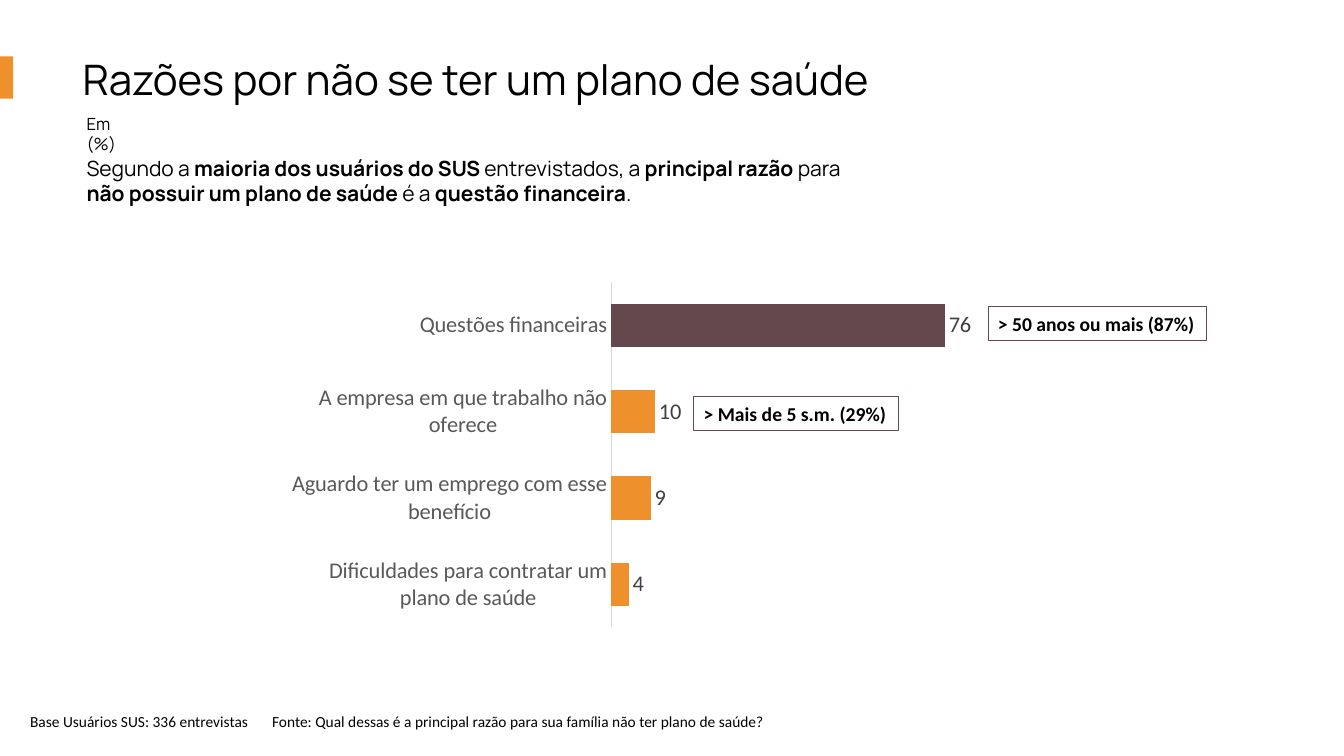
from dataclasses import dataclass

from lxml import etree
from pptx import Presentation
from pptx.chart.data import CategoryChartData
from pptx.dml.color import RGBColor
from pptx.enum import chart as ch, shapes, text
from pptx.oxml import ns
from pptx.util import Inches, Pt


@dataclass(frozen=True)
class Theme:
    heading: str = "Manrope"
    body: str = "Calibri"
    black: str = "000000"
    white: str = "FFFFFF"
    orange: str = "EE902C"
    plum: str = "65484D"
    axis_text: str = "595959"
    axis_line: str = "D9D9D9"
    value_text: str = "404040"
    title_size: float = 30
    lead_size: float = 15
    unit_size: float = 12
    source_size: float = 11
    callout_size: float = 14
    chart_size: float = 16
    line_width: float = 0.75


def rgb(value):
    return RGBColor.from_string(value)


def set_font(font, size, name, color, bold=False):
    font.size, font.name, font.bold = Pt(size), name, bold
    font.color.rgb = rgb(color)


def write(tf, content, *, size, name, color, bold=False, wrap=True, tab=None):
    """Fill tf; in content, every second part between asterisks is bold."""
    tf.word_wrap = wrap
    p = tf.paragraphs[0]
    p.alignment = text.PP_ALIGN.LEFT
    for i, part in enumerate(content.split("*")):
        if part:
            r = p.add_run()
            r.text = part
            set_font(r.font, size, name, color, bold or i % 2 == 1)
    if tab:
        tabs = etree.SubElement(p._p.get_or_add_pPr(), ns.qn("a:tabLst"))
        etree.SubElement(tabs, ns.qn("a:tab"), pos=str(Inches(tab)), algn="l")


def set_plot_area(chart, **fractions):
    """Fix the inner plot area as fractions (x, y, w, h) of the chart."""
    plot_area = chart._chartSpace.chart.plotArea
    for old in plot_area.findall(ns.qn("c:layout")):
        plot_area.remove(old)
    layout = etree.Element(ns.qn("c:layout"))
    manual = etree.SubElement(layout, ns.qn("c:manualLayout"))
    settings = {"layoutTarget": "inner", "xMode": "edge", "yMode": "edge", **fractions}
    for tag, value in settings.items():
        etree.SubElement(manual, ns.qn(f"c:{tag}"), val=str(value))
    plot_area.insert(0, layout)


class SlideBuilder:
    def __init__(self, prs, theme):
        self.theme = theme
        self.s = prs.slides.add_slide(prs.slide_layouts[6])

    def text(self, box, content, **style):
        sp = self.s.shapes.add_textbox(*map(Inches, box))
        write(sp.text_frame, content, color=self.theme.black, **style)

    def rect(self, box, fill, line=None):
        sp = self.s.shapes.add_shape(shapes.MSO_SHAPE.RECTANGLE, *map(Inches, box))
        sp.shadow.inherit = False
        sp.fill.solid()
        sp.fill.fore_color.rgb = rgb(fill)
        if line:
            sp.line.color.rgb = rgb(line)
            sp.line.width = Pt(self.theme.line_width)
        else:
            sp.line.fill.background()
        return sp

    def callout(self, box, content):
        t = self.theme
        tf = self.rect(box, t.white, t.plum).text_frame
        tf.vertical_anchor = text.MSO_ANCHOR.MIDDLE
        write(tf, content, size=t.callout_size, name=t.body, color=t.black,
              bold=True, wrap=False)

    def bar_chart(self, box, values):
        """Horizontal bars, first category on top and highlighted."""
        t = self.theme
        data = CategoryChartData(number_format="####")
        data.categories = list(values)
        data.add_series("Series 1", list(values.values()))
        chart = self.s.shapes.add_chart(
            ch.XL_CHART_TYPE.BAR_CLUSTERED, *map(Inches, box), data).chart
        chart.has_legend = chart.has_title = False
        set_font(chart.font, t.chart_size, t.body, t.black)
        set_plot_area(chart, x=0.423, y=0.041, w=0.56, h=0.918)

        cat = chart.category_axis
        cat.reverse_order = True
        cat.major_tick_mark = ch.XL_TICK_MARK.NONE
        set_font(cat.tick_labels.font, t.chart_size, t.body, t.axis_text)
        cat.format.line.color.rgb = rgb(t.axis_line)
        cat.format.line.width = Pt(t.line_width)
        val = chart.value_axis
        val.minimum_scale, val.maximum_scale = 0, 100
        val.has_major_gridlines = val.visible = False

        plot = chart.plots[0]
        plot.gap_width = 100
        plot.vary_by_categories = False
        series = plot.series[0]
        for item, color in ((series, t.orange), (series.points[0], t.plum)):
            item.format.fill.solid()
            item.format.fill.fore_color.rgb = rgb(color)
        labels = series.data_labels
        labels.show_value = True
        labels.position = ch.XL_LABEL_POSITION.OUTSIDE_END
        labels.number_format, labels.number_format_is_linked = "####", False
        set_font(labels.font, t.chart_size, t.body, t.value_text)


def main():
    prs = Presentation()
    prs.slide_width, prs.slide_height = Inches(13.33), Inches(7.5)
    t = Theme()
    b = SlideBuilder(prs, t)

    b.text((0.72, 0.48, 11.01, 0.61), "Razões por não se ter um plano de saúde",
           size=t.title_size, name=t.heading)
    b.text((0.76, 1.49, 7.78, 0.61),
           "Segundo a *maioria dos usuários do SUS *entrevistados, a *principal razão *para "
           "*não possuir um plano de saúde* é a *questão financeira*.",
           size=t.lead_size, name=t.heading)
    b.rect((0, 0.56, 0.13, 0.42), t.orange)
    b.text((0.76, 1.08, 0.72, 0.3), "Em (%)", size=t.unit_size, name=t.heading)
    b.text((0.2, 7.02, 13, 0.47),
           "Base Usuários SUS: 336 entrevistas\t"
           "Fonte: Qual dessas é a principal razão para sua família não ter plano de saúde?",
           size=t.source_size, name=t.body, tab=2.4)

    b.bar_chart((2.77, 2.65, 7.78, 3.73), {
        "Questões financeiras": 76,
        "A empresa em que trabalho não oferece": 10,
        "Aguardo ter um emprego com esse benefício": 9,
        "Dificuldades para contratar um plano de saúde": 4,
    })
    b.callout((9.8, 3.04, 2.17, 0.34), "> 50 anos ou mais (87%)")
    b.callout((6.88, 3.93, 2.03, 0.34), "> Mais de 5 s.m. (29%)")
    prs.save("out.pptx")


if __name__ == "__main__":
    main()
